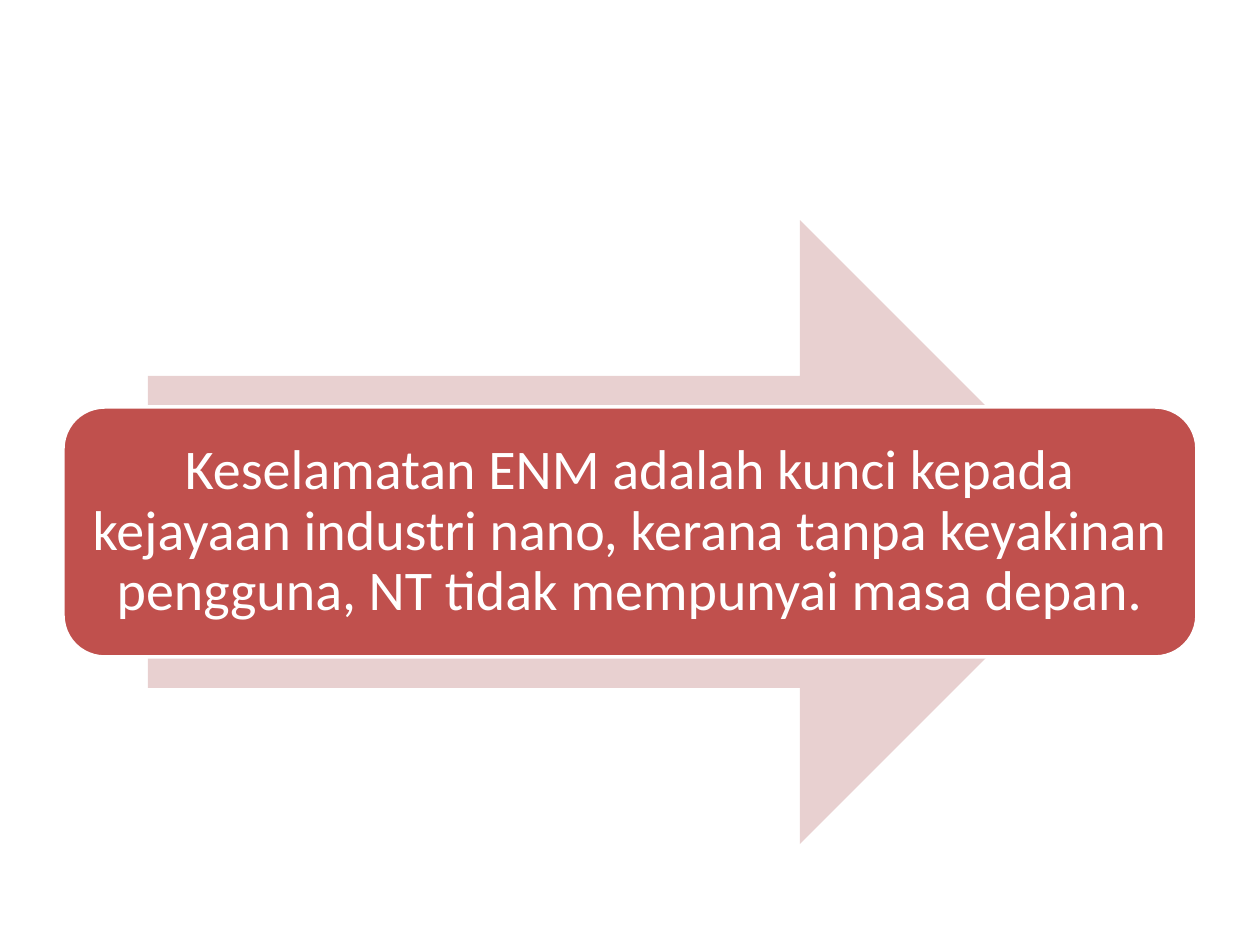
from pptx import Presentation
from pptx.dml.color import RGBColor
from pptx.enum.shapes import MSO_SHAPE
from pptx.enum.text import MSO_ANCHOR, PP_ALIGN
from pptx.util import Emu, Pt

RIGHT_ARROW = MSO_SHAPE.RIGHT_ARROW
ROUNDED_RECTANGLE = MSO_SHAPE.ROUNDED_RECTANGLE
MIDDLE = MSO_ANCHOR.MIDDLE
CENTER = PP_ALIGN.CENTER

PX_PER_INCH = 126
BLANK_LAYOUT = 6
MESSAGE = (
    "Keselamatan ENM adalah kunci kepada kejayaan industri nano, "
    "kerana tanpa keyakinan pengguna, NT tidak mempunyai masa depan."
)


def px(length):
    return Emu(round(length * 914400 / PX_PER_INCH))


def color(hex_string):
    return RGBColor.from_string(hex_string)


def add_block(shapes, kind, box, fill, line=None, line_width=2):
    shape = shapes.add_shape(kind, *map(px, box))
    shape.shadow.inherit = False
    shape.fill.solid()
    shape.fill.fore_color.rgb = color(fill)
    if line:
        shape.line.color.rgb = color(line)
        shape.line.width = Pt(line_width)
    else:
        shape.line.fill.background()
    return shape


def write_text(shape, text, size=32, font="Calibri", text_color="FFFFFF",
               align=CENTER, anchor=MIDDLE, line_spacing=0.9, inset=16):
    frame = shape.text_frame
    frame.word_wrap = True
    frame.vertical_anchor = anchor
    frame.margin_left = frame.margin_right = px(inset)
    frame.margin_top = frame.margin_bottom = px(inset)
    paragraph = frame.paragraphs[0]
    paragraph.alignment = align
    paragraph.line_spacing = line_spacing
    run = paragraph.add_run()
    run.text = text
    run.font.size = Pt(size)
    run.font.name = font
    run.font.color.rgb = color(text_color)


def add_arrow_process(slide, box, text):
    """Place a banner across the middle of an arrow, both centred in the box."""
    left, top, width, height = box
    arrow_width = round(width * 0.85)
    banner_height = round(height * 0.4)
    arrow_box = (left + (width - arrow_width) // 2, top, arrow_width, height)
    banner_box = (left, top + (height - banner_height) // 2, width, banner_height)

    group = slide.shapes.add_group_shape()
    add_block(group.shapes, RIGHT_ARROW, arrow_box, "E8D0D0")
    banner = add_block(group.shapes, ROUNDED_RECTANGLE, banner_box, "C0504D",
                       line="FFFFFF")
    write_text(banner, text)


def main():
    presentation = Presentation()
    presentation.slide_width = px(1260)
    presentation.slide_height = px(945)
    slide = presentation.slides.add_slide(presentation.slide_layouts[BLANK_LAYOUT])
    add_arrow_process(slide, (63, 220, 1134, 624), MESSAGE)
    presentation.save("out.pptx")


if __name__ == "__main__":
    main()
